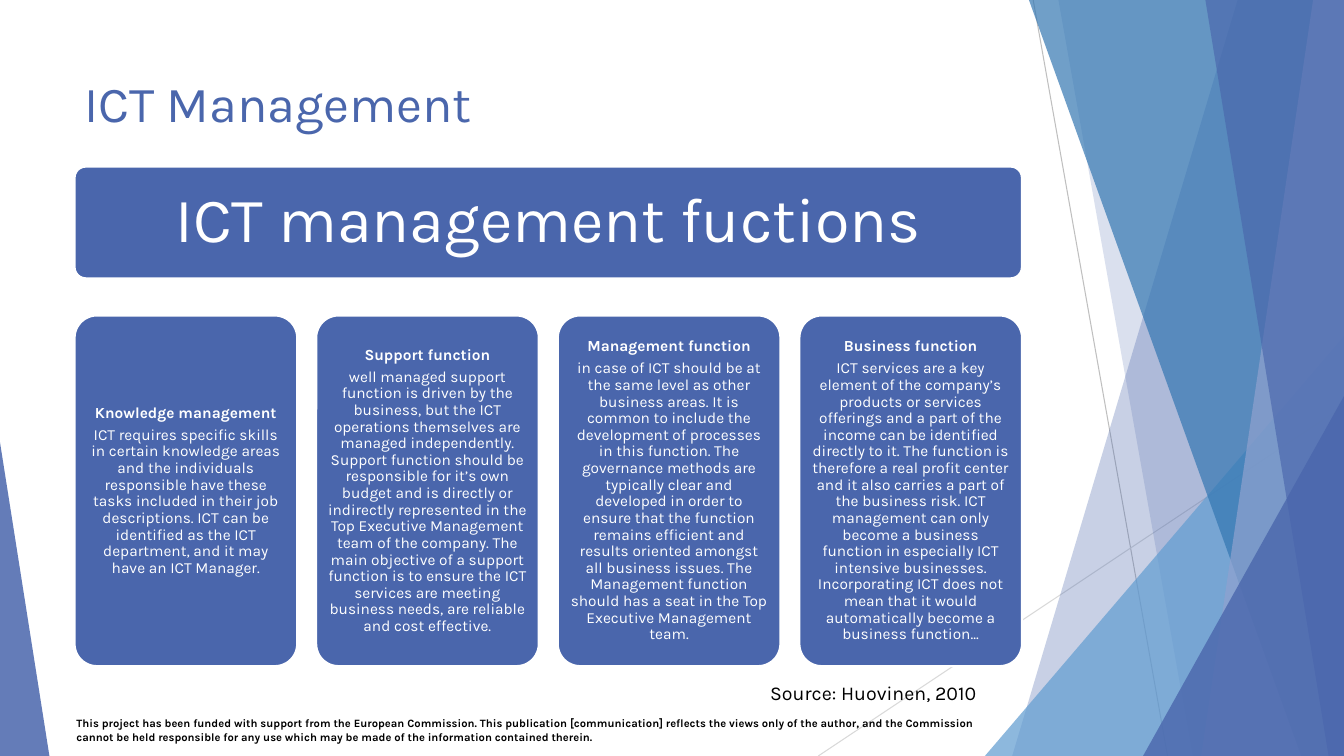
from lxml.etree import SubElement
from pptx import Presentation
from pptx.dml.color import RGBColor
from pptx.enum.shapes import MSO_CONNECTOR as Connector, MSO_SHAPE as Shape
from pptx.enum.text import MSO_ANCHOR as Anchor, PP_ALIGN as Align
from pptx.oxml.ns import qn
from pptx.util import Pt

WIDTH, HEIGHT = 960, 540
BLUE, WHITE, BLACK = "4A66AC", "FFFFFF", "000000"

FUNCTIONS = [
    ("Knowledge management",
     "ICT requires specific skills in certain knowledge areas and the individuals responsible have "
     "these tasks included in their job descriptions. ICT can be identified as the ICT department, "
     "and it may have an ICT Manager."),
    ("Support function",
     "well managed support function is driven by the business, but the ICT operations themselves are "
     "managed independently. Support function should be responsible for it’s own budget and is "
     "directly or indirectly represented in the Top Executive Management team of the company. The "
     "main objective of a support function is to ensure the ICT services are meeting business needs, "
     "are reliable and cost effective."),
    ("Management function",
     "in case of ICT should be at the same level as other business areas. It is common to include the "
     "development of processes in this function. The governance methods are typically clear and "
     "developed in order to ensure that the function remains efficient and results oriented amongst "
     "all business issues. The Management function should has a seat in the Top Executive Management "
     "team."),
    ("Business function",
     "ICT services are a key element of the company’s products or services offerings and a part of "
     "the income can be identified directly to it. The function is therefore a real profit center and "
     "it also carries a part of the business risk. ICT management can only become a business function "
     "in especially ICT intensive businesses. Incorporating ICT does not mean that it would "
     "automatically become a business function..."),
]
DISCLAIMER = (
    "This project has been funded with support from the European Commission. This publication "
    "[communication] reflects the views only of the author, and the Commission cannot be held "
    "responsible for any use which may be made of the information contained therein."
)


def color(value):
    return RGBColor.from_string(value)


class SlideBuilder:
    """Draw styled elements on the current slide, with lengths in points."""

    font = "Karla"

    def __init__(self, page):
        self.page = page

    def paint(self, shape, fill, opacity=100):
        shape.shadow.inherit = False
        shape.fill.solid()
        shape.fill.fore_color.rgb = color(fill)
        shape.line.fill.background()
        if opacity < 100:
            tint = shape._element.spPr.find(qn("a:solidFill"))[0]
            SubElement(tint, qn("a:alpha")).set("val", str(opacity * 1000))

    def line(self, start, end, stroke):
        points = [Pt(value) for value in (*start, *end)]
        line = self.page.shapes.add_connector(Connector.STRAIGHT, *points)
        line.line.color.rgb = color(stroke)
        line.line.width = Pt(0.75)
        SubElement(line._element.spPr, qn("a:effectLst"))

    def band(self, top_left, bottom_left, fill, opacity):
        builder = self.page.shapes.build_freeform(Pt(top_left), 0)
        corners = [(WIDTH, 0), (WIDTH, HEIGHT), (bottom_left, HEIGHT)]
        builder.add_line_segments([(Pt(x), Pt(y)) for x, y in corners])
        self.paint(builder.convert_to_shape(), fill, opacity)

    def triangle(self, left, top, width, apex, fill, opacity):
        shape = self.page.shapes.add_shape(
            Shape.ISOSCELES_TRIANGLE, Pt(left), Pt(top), Pt(width), Pt(HEIGHT - top))
        shape.adjustments[0] = apex
        self.paint(shape, fill, opacity)

    def fill_para(self, para, text, size, fill, bold=False):
        para.text = text
        para.font.name = self.font
        para.font.size = Pt(size)
        para.font.bold = bold
        para.font.color.rgb = color(fill)

    def text(self, left, top, width, height, text, size, fill, bold=False):
        box = self.page.shapes.add_textbox(Pt(left), Pt(top), Pt(width), Pt(height))
        box.text_frame.word_wrap = True
        self.fill_para(box.text_frame.paragraphs[0], text, size, fill, bold)

    def card(self, left, top, width, height, inset, entries):
        card = self.page.shapes.add_shape(
            Shape.ROUNDED_RECTANGLE, Pt(left), Pt(top), Pt(width), Pt(height))
        card.adjustments[0] = 0.1
        self.paint(card, BLUE)
        card.line.color.rgb = color(WHITE)
        card.line.width = Pt(1.5)
        frame = card.text_frame
        frame.word_wrap = True
        frame.vertical_anchor = Anchor.MIDDLE
        frame.margin_left = frame.margin_right = Pt(inset)
        frame.margin_top = frame.margin_bottom = Pt(inset)
        for index, (text, size, bold) in enumerate(entries):
            para = frame.add_paragraph() if index else frame.paragraphs[0]
            para.alignment = Align.CENTER
            para.line_spacing = 0.9
            para.space_after = Pt(size * 0.35)
            self.fill_para(para, text, size, WHITE, bold)


def main():
    deck = Presentation()
    deck.slide_width, deck.slide_height = Pt(WIDTH), Pt(HEIGHT)
    slide = SlideBuilder(deck.slides.add_slide(deck.slide_layouts[6]))

    slide.line((738, 0), (834, HEIGHT), "BFBFBF")
    slide.line((WIDTH, 290), (584.5, HEIGHT), "D9D9D9")
    slide.band(884, 723, BLUE, 30)
    slide.band(756, 852, BLUE, 20)
    slide.triangle(703.5, 240, 256.5, 1, "629DD1", 72)
    slide.band(735, 929.5, "3477B2", 70)
    slide.band(938, 858, "90A2CF", 70)
    slide.band(861, 949, BLUE, 65)
    slide.triangle(816.5, 283, 143.5, 1, BLUE, 80)
    slide.triangle(0, 316, 35.3, 0, BLUE, 85)

    slide.text(47.5, 508.3, 681, 27, DISCLAIMER, 8, BLACK, bold=True)
    slide.text(53.3, 48.2, 677, 104, "ICT Management", 36, BLUE)

    left, width, card_width = 53.3, 676.7, 159
    slide.card(left, 119, width, 79.8, 13.7, [("ICT management fuctions", 45, False)])
    pitch = (width - card_width) / (len(FUNCTIONS) - 1)
    for index, (heading, body) in enumerate(FUNCTIONS):
        slide.card(left + index * pitch, 225.4, card_width, 250.4, 3.6,
                   [(heading, 11, True), (body, 11, False)])
    slide.text(543, 483, 212.5, 24.5, "Source: Huovinen, 2010", 14, BLACK)

    deck.save("out.pptx")


if __name__ == "__main__":
    main()
